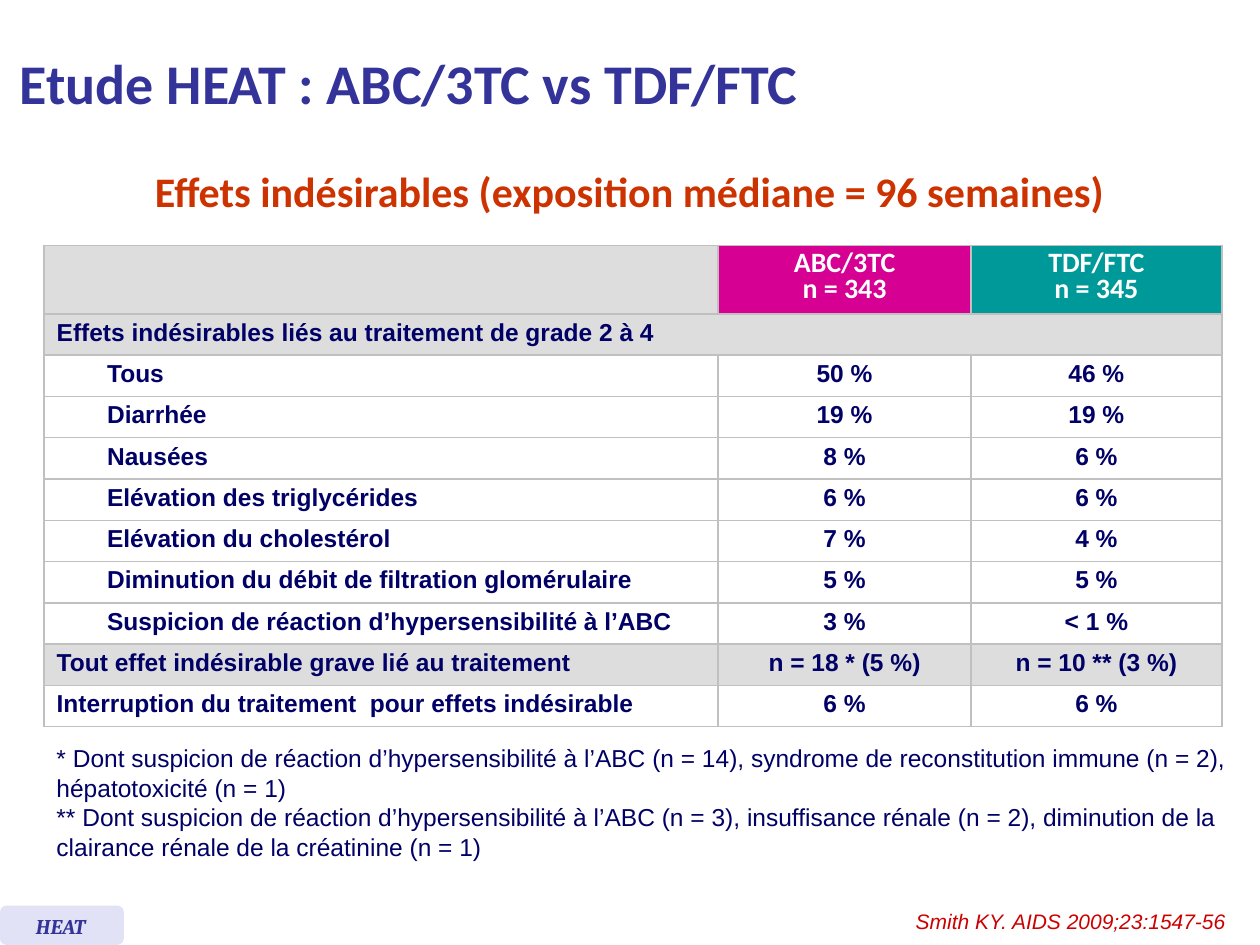
"""Build the HEAT study slide on adverse events."""
import pptx
import pptx.dml.color
import pptx.enum.shapes
import pptx.enum.text
import pptx.oxml
import pptx.oxml.ns
import pptx.util

Pt = pptx.util.Pt
ALIGN = pptx.enum.text.PP_ALIGN
ANCHOR = pptx.enum.text.MSO_ANCHOR
NAVY, INDIGO, GREY, WHITE = "000066", "333399", "DDDDDD", "FFFFFF"


def rgb(value):
    return pptx.dml.color.RGBColor.from_string(value)


def write(tf, lines, font, size, color, bold=False, italic=False, align=ALIGN.LEFT, spacing=None):
    tf.text = "\n".join(lines)
    for p in tf.paragraphs:
        p.alignment = align
        p.line_spacing = spacing
        p.font.name = font
        p.font.size = Pt(size)
        p.font.bold = bold
        p.font.italic = italic
        p.font.color.rgb = rgb(color)


prs = pptx.Presentation()
prs.slide_width, prs.slide_height = Pt(720), Pt(540)
s = prs.slides.add_slide(prs.slide_layouts[6])

tf = s.shapes.add_textbox(Pt(4.3), Pt(3.6), Pt(645), Pt(87)).text_frame
tf.word_wrap = True
tf.vertical_anchor = ANCHOR.MIDDLE
write(tf, ["Etude HEAT : ABC/3TC vs TDF/FTC"], "Calibri", 32, INDIGO, bold=True)

tf = s.shapes.add_textbox(Pt(4.3), Pt(91), Pt(711), Pt(49)).text_frame
tf.word_wrap = True
write(tf, ["Effets indésirables (exposition médiane = 96 semaines)"],
      "Calibri", 24, "CC3300", bold=True, align=ALIGN.CENTER)

tf = s.shapes.add_textbox(Pt(25.2), Pt(421.2), Pt(690), Pt(74)).text_frame
tf.word_wrap = True
write(tf, [
    "* Dont suspicion de réaction d’hypersensibilité à l’ABC (n = 14), "
    "syndrome de reconstitution immune (n = 2), hépatotoxicité (n = 1)",
    "** Dont suspicion de réaction d’hypersensibilité à l’ABC (n = 3), "
    "insuffisance rénale (n = 2), diminution de la clairance rénale de la créatinine (n = 1)",
], "Arial", 14, NAVY)

rows = [
    ("", "ABC/3TC\vn = 343", "TDF/FTC\vn = 345"),
    ("Effets indésirables liés au traitement de grade 2 à 4", "", ""),
    ("Tous", "50 %", "46 %"),
    ("Diarrhée", "19 %", "19 %"),
    ("Nausées", "8 %", "6 %"),
    ("Elévation des triglycérides", "6 %", "6 %"),
    ("Elévation du cholestérol", "7 %", "4 %"),
    ("Diminution du débit de filtration glomérulaire", "5 %", "5 %"),
    ("Suspicion de réaction d’hypersensibilité à l’ABC", "3 %", "< 1 %"),
    ("Tout effet indésirable grave lié au traitement", "n = 18 * (5 %)", "n = 10 ** (3 %)"),
    ("Interruption du traitement  pour effets indésirable", "6 %", "6 %"),
]
header_fills = [GREY, "D60093", "009999"]
grey_rows, event_rows = (1, 9), range(2, 9)

table = s.shapes.add_table(len(rows), 3, Pt(25.2), Pt(140.4), Pt(673), Pt(275)).table
for column, width in zip(table.columns, (385.2, 144.5, 143.3)):
    column.width = Pt(width)
for i, row in enumerate(rows):
    table.rows[i].height = Pt(23.6 if i else 39)
    for j, text in enumerate(row):
        cell = table.cell(i, j)
        cell.vertical_anchor = ANCHOR.MIDDLE
        if j == 0 and i in event_rows:
            cell.margin_left = Pt(36)
        align = ALIGN.CENTER if j else ALIGN.LEFT
        if i == 0:
            fill = header_fills[j]
            write(cell.text_frame, [text], "Calibri", 16, WHITE, True, align=align, spacing=Pt(15.2))
        else:
            fill = GREY if i in grey_rows else WHITE
            write(cell.text_frame, [text], "Arial", 14, NAVY, True, align=align, spacing=Pt(13.6))
        for side in ("lnL", "lnR", "lnT", "lnB"):
            cell._tc.get_or_add_tcPr().append(pptx.oxml.parse_xml(
                f'<a:{side} {pptx.oxml.ns.nsdecls("a")} w="12700"><a:solidFill>'
                f'<a:srgbClr val="C0C0C0"/></a:solidFill></a:{side}>'))
        cell.fill.solid()
        cell.fill.fore_color.rgb = rgb(fill)
table.cell(1, 0).merge(table.cell(1, 2))

group = s.shapes.add_group_shape()
sp = group.shapes.add_shape(pptx.enum.shapes.MSO_SHAPE.ROUNDED_RECTANGLE,
                            Pt(0), Pt(517.5), Pt(70.8), Pt(22.5))
sp.shadow.inherit = False
sp.fill.solid()
sp.fill.fore_color.rgb = rgb("E2E2F6")
sp.line.fill.background()
tf = group.shapes.add_textbox(Pt(13.5), Pt(518.4), Pt(44), Pt(21.6)).text_frame
tf.word_wrap = False
write(tf, ["HEAT"], "Cambria", 12, INDIGO, bold=True, italic=True)

tf = s.shapes.add_textbox(Pt(516.2), Pt(515.5), Pt(193), Pt(21.6)).text_frame
tf.word_wrap = False
write(tf, ["Smith KY. AIDS 2009;23:1547-56"], "Arial", 12, "CC0000", italic=True)

prs.save("out.pptx")
